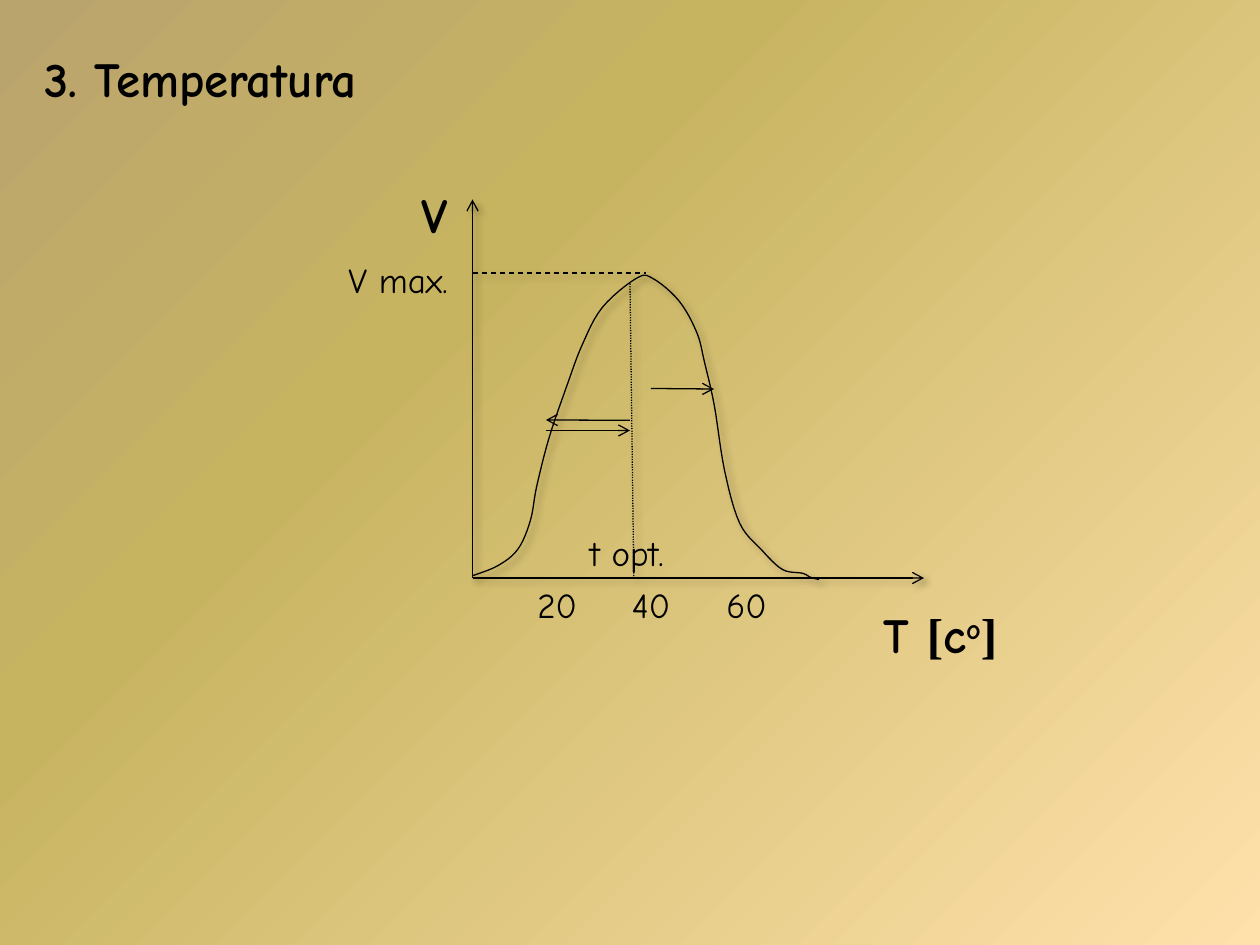
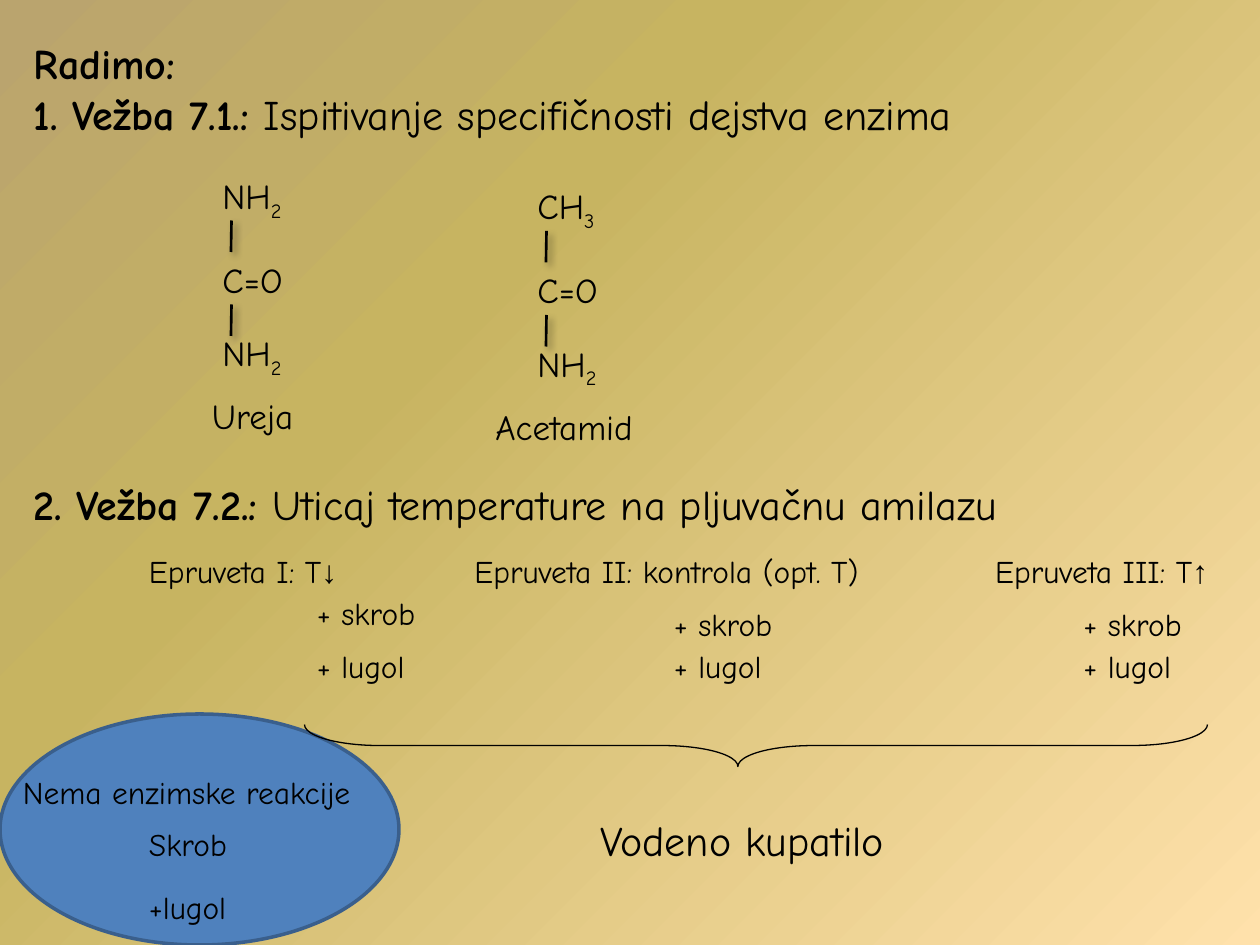
from dataclasses import dataclass, field
from typing import Optional

from lxml import etree
from pptx import Presentation
from pptx.dml.color import RGBColor
from pptx.enum.dml import MSO_LINE
from pptx.enum.shapes import MSO_CONNECTOR, MSO_SHAPE
from pptx.enum.text import MSO_ANCHOR, MSO_AUTO_SIZE, PP_ALIGN
from pptx.oxml.ns import qn
from pptx.util import Pt

DASH, DOT = MSO_LINE.DASH, MSO_LINE.ROUND_DOT
STRAIGHT = MSO_CONNECTOR.STRAIGHT
ELLIPSE, BRACE = MSO_SHAPE.OVAL, MSO_SHAPE.LEFT_BRACE
LEFT, TOP = PP_ALIGN.LEFT, MSO_ANCHOR.TOP
GROW = MSO_AUTO_SIZE.SHAPE_TO_FIT_TEXT
TITLE_ONLY = 5


@dataclass(frozen=True)
class Theme:
    ink: RGBColor = RGBColor(0, 0, 0)
    oval_fill: RGBColor = RGBColor(0x4F, 0x81, 0xBD)
    oval_edge: RGBColor = RGBColor(0x3A, 0x5F, 0x8C)
    backdrop: tuple = ((0, "FFE1AB"), (65, "C7B461"), (100, "BAA46E"))
    backdrop_angle: int = 135
    font: str = "Comic Neue"
    symbol_font: str = "Times New Roman"
    title: int = 28
    heading: int = 24
    label: int = 20
    small: int = 18
    thin: float = 0.75
    bond: float = 1.5


THEME = Theme()


@dataclass(frozen=True)
class Run:
    text: str
    bold: Optional[bool] = None
    font: Optional[str] = None
    baseline: int = 0


@dataclass(frozen=True)
class Label:
    left: float
    top: float
    width: float
    lines: list
    size: int = THEME.label
    bold: bool = False


@dataclass(frozen=True)
class Stroke:
    start: tuple
    end: tuple
    width: float = THEME.thin
    dash: Optional[MSO_LINE] = None
    arrow: bool = False
    shadow: bool = True


@dataclass(frozen=True)
class Molecule:
    left: float
    top: float
    head: str
    head_index: str
    head_width: float
    name: str
    name_shift: float
    name_width: float


@dataclass(frozen=True)
class TestTube:
    left: float
    width: float
    title: str
    additions_left: float
    starch_top: float
    arrow: str = field(default="")


def paint_backdrop(prs) -> None:
    master = prs.slide_master
    fill = master.background.fill
    fill.gradient()
    fill.gradient_angle = THEME.backdrop_angle
    stops = master.element.find(".//" + qn("a:gsLst"))
    for old_stop in list(stops):
        stops.remove(old_stop)
    for percent, colour in THEME.backdrop:
        stop = etree.SubElement(stops, qn("a:gs"), pos=str(percent * 1000))
        etree.SubElement(stop, qn("a:srgbClr"), val=colour)


def set_effects(shape, shadow: bool) -> None:
    """Replace the theme's shadow by a soft one, or by none."""
    effects = etree.SubElement(shape.element.spPr, qn("a:effectLst"))
    if shadow:
        outer = etree.SubElement(effects, qn("a:outerShdw"), blurRad=str(Pt(4)),
                                 dist=str(Pt(3)), dir="2700000", rotWithShape="0")
        colour = etree.SubElement(outer, qn("a:srgbClr"), val=str(THEME.ink))
        etree.SubElement(colour, qn("a:alpha"), val="40000")


def write_label(shape, label: Label) -> None:
    """Place a text box or title placeholder and fill it with the label."""
    shape.left, shape.top, shape.width = Pt(label.left), Pt(label.top), Pt(label.width)
    shape.height = Pt(label.size * 1.2 * len(label.lines) + 7.2)
    frame = shape.text_frame
    frame.word_wrap = False
    frame.auto_size = GROW
    frame.vertical_anchor = TOP
    for number, runs in enumerate(label.lines):
        paragraph = frame.add_paragraph() if number else frame.paragraphs[0]
        paragraph.alignment = LEFT
        font = paragraph.font
        font.name, font.size, font.bold = THEME.font, Pt(label.size), label.bold
        font.color.rgb = THEME.ink
        for part in runs:
            run = paragraph.add_run()
            run.text = part.text
            if part.bold is not None:
                run.font.bold = part.bold
            if part.font:
                run.font.name = part.font
            if part.baseline:
                run._r.get_or_add_rPr().set("baseline", str(part.baseline * 1000))


def add_label(slide, label: Label) -> None:
    write_label(slide.shapes.add_textbox(0, 0, 0, 0), label)


def add_text(slide, left: float, top: float, width: float, text: str,
             size: int = THEME.label, bold: bool = False) -> None:
    add_label(slide, Label(left, top, width, [[Run(text)]], size, bold))


def add_stroke(slide, stroke: Stroke) -> None:
    ends = [Pt(value) for value in (*stroke.start, *stroke.end)]
    connector = slide.shapes.add_connector(STRAIGHT, *ends)
    line = connector.line
    line.color.rgb = THEME.ink
    line.width = Pt(stroke.width)
    if stroke.dash is not None:
        line.dash_style = stroke.dash
    if stroke.arrow:
        etree.SubElement(connector.element.spPr.find(qn("a:ln")),
                         qn("a:tailEnd"), type="arrow")
    set_effects(connector, stroke.shadow)


def smooth_path(knots: list, steps: int = 6) -> list:
    """Points of a Catmull-Rom curve through the knots."""
    padded = [knots[0], *knots, knots[-1]]
    points = [knots[0]]
    for before, start, end, after in zip(padded, padded[1:], padded[2:], padded[3:]):
        for step in range(1, steps + 1):
            t = step / steps
            points.append(tuple(
                (2 * b + (c - a) * t + (2 * a - 5 * b + 4 * c - d) * t ** 2
                 + (3 * b - a - 3 * c + d) * t ** 3) / 2
                for a, b, c, d in zip(before, start, end, after)))
    return points


def add_curve(slide, knots: list) -> None:
    points = [(Pt(x), Pt(y)) for x, y in smooth_path(knots)]
    builder = slide.shapes.build_freeform(*points[0])
    builder.add_line_segments(points[1:], close=False)
    curve = builder.convert_to_shape()
    curve.fill.background()
    curve.line.color.rgb = THEME.ink
    curve.line.width = Pt(THEME.thin)
    set_effects(curve, True)


def add_molecule(slide, molecule: Molecule) -> None:
    left, top = molecule.left, molecule.top
    groups = ((0, molecule.head_width, molecule.head, molecule.head_index),
              (90, 54.7, "NH", "2"))
    for drop, width, symbol, index in groups:
        add_label(slide, Label(left, top + drop, width,
                               [[Run(symbol), Run(index, baseline=-25)]]))
    add_text(slide, left, top + 48, 53.3, "C=O")
    for drop in (30, 78):
        add_stroke(slide, Stroke((left + 12.3, top + drop), (left + 12, top + drop + 18),
                                 THEME.bond))
    add_text(slide, left + molecule.name_shift, top + 126, molecule.name_width,
             molecule.name)


def add_test_tube(slide, tube: TestTube) -> None:
    title = [Run(tube.title)]
    if tube.arrow:
        title.append(Run(tube.arrow, font=THEME.symbol_font))
    add_label(slide, Label(tube.left, 312, tube.width, [title], THEME.small))
    add_text(slide, tube.additions_left, tube.starch_top, 75.6, "+ skrob", THEME.small)
    add_text(slide, tube.additions_left, 366, 67, "+ lugol", THEME.small)


def build_temperature_slide(prs) -> None:
    slide = prs.slides.add_slide(prs.slide_layouts[TITLE_ONLY])
    write_label(slide.shapes.title,
                Label(18, 24, 231, [[Run("3. Temperatura")]], THEME.title, True))

    origin = (270, 330.3)
    add_stroke(slide, Stroke(origin, (528, 330.3), arrow=True))
    add_stroke(slide, Stroke(origin, (270, 114), arrow=True))
    add_label(slide, Label(498, 342, 90, [[
        Run("T "), Run("[", font=THEME.symbol_font), Run("c"),
        Run("o", baseline=30), Run("]", font=THEME.symbol_font)]], THEME.title, True))
    add_text(slide, 234, 102, 33.8, "V", THEME.title, True)

    add_curve(slide, [
        (270, 329), (284.4, 323.3), (295.9, 313.9), (303.1, 297.4), (306.7, 277.9),
        (313.9, 249.8), (324, 220.3), (332.6, 197.3), (344.2, 175.7), (363.6, 159.1),
        (373, 159.1), (388.1, 172.1), (398.2, 190.1), (402.5, 206.6), (408.2, 231.8),
        (414, 268.6), (422.6, 298.8), (434.9, 313.9), (447.1, 325.4), (458.6, 327.6),
        (463, 329.8), (468, 331.2)])
    add_stroke(slide, Stroke((360, 162), (362.2, 330.3), dash=DOT))
    add_text(slide, 330, 300, 66.2, "t opt.")
    add_text(slide, 192, 144, 76.3, "V max.")
    add_stroke(slide, Stroke((270, 156), (369.4, 156), dash=DASH))

    for start, end in (((312, 246), (360, 246)), ((360, 240.2), (312, 240)),
                       ((372, 222), (408, 222.3))):
        add_stroke(slide, Stroke(start, end, arrow=True, shadow=False))
    for position, degrees in enumerate((20, 40, 60)):
        add_text(slide, 300 + 54 * position, 330, 39.6, str(degrees))


def build_exercises_slide(prs) -> None:
    slide = prs.slides.add_slide(prs.slide_layouts[TITLE_ONLY])
    oval = slide.shapes.add_shape(ELLIPSE, 0, Pt(408), Pt(228), Pt(132))
    oval.shadow.inherit = False
    oval.fill.solid()
    oval.fill.fore_color.rgb = THEME.oval_fill
    oval.line.color.rgb = THEME.oval_edge
    oval.line.width = Pt(2)

    write_label(slide.shapes.title, Label(12, 18, 667.4, [
        [Run("Radimo:")],
        [Run("1. Vežba 7.1.: "),
         Run("Ispitivanje specifičnosti dejstva enzima", bold=False)],
    ], THEME.heading, True))
    add_molecule(slide, Molecule(120, 96, "NH", "2", 54.7, "Ureja", -6, 69))
    add_molecule(slide, Molecule(300, 102, "CH", "3", 50.4, "Acetamid", -24, 103.7))

    add_label(slide, Label(12, 270, 649.4, [[
        Run("2. Vežba 7.2.: "),
        Run("Uticaj temperature na pljuvačnu amilazu", bold=False),
    ]], THEME.heading, True))
    for tube in (TestTube(78, 138.2, "Epruveta I: T", 174, 336, "↓"),
                 TestTube(264, 265.7, "Epruveta II: kontrola (opt. T)", 378, 342),
                 TestTube(561.6, 158.4, "Epruveta III: T", 612, 342, "↑")):
        add_test_tube(slide, tube)

    for left, top, width, text in ((78, 468, 65.5, "Skrob"),
                                   (6, 438, 218.2, "Nema enzimske reakcije"),
                                   (78, 504, 61.2, "+lugol")):
        add_text(slide, left, top, width, text, THEME.small)

    brace = slide.shapes.add_shape(BRACE, Pt(420), Pt(168), Pt(24), Pt(516))
    brace.rotation = 270
    brace.adjustments[0], brace.adjustments[1] = 1.79, 0.48
    brace.shadow.inherit = False
    brace.fill.background()
    brace.line.color.rgb = THEME.ink
    brace.line.width = Pt(THEME.thin)
    add_text(slide, 336, 462, 190, "Vodeno kupatilo", THEME.heading)


def main() -> None:
    prs = Presentation()
    prs.slide_width, prs.slide_height = Pt(720), Pt(540)
    paint_backdrop(prs)
    build_temperature_slide(prs)
    build_exercises_slide(prs)
    prs.save("out.pptx")


if __name__ == "__main__":
    main()
